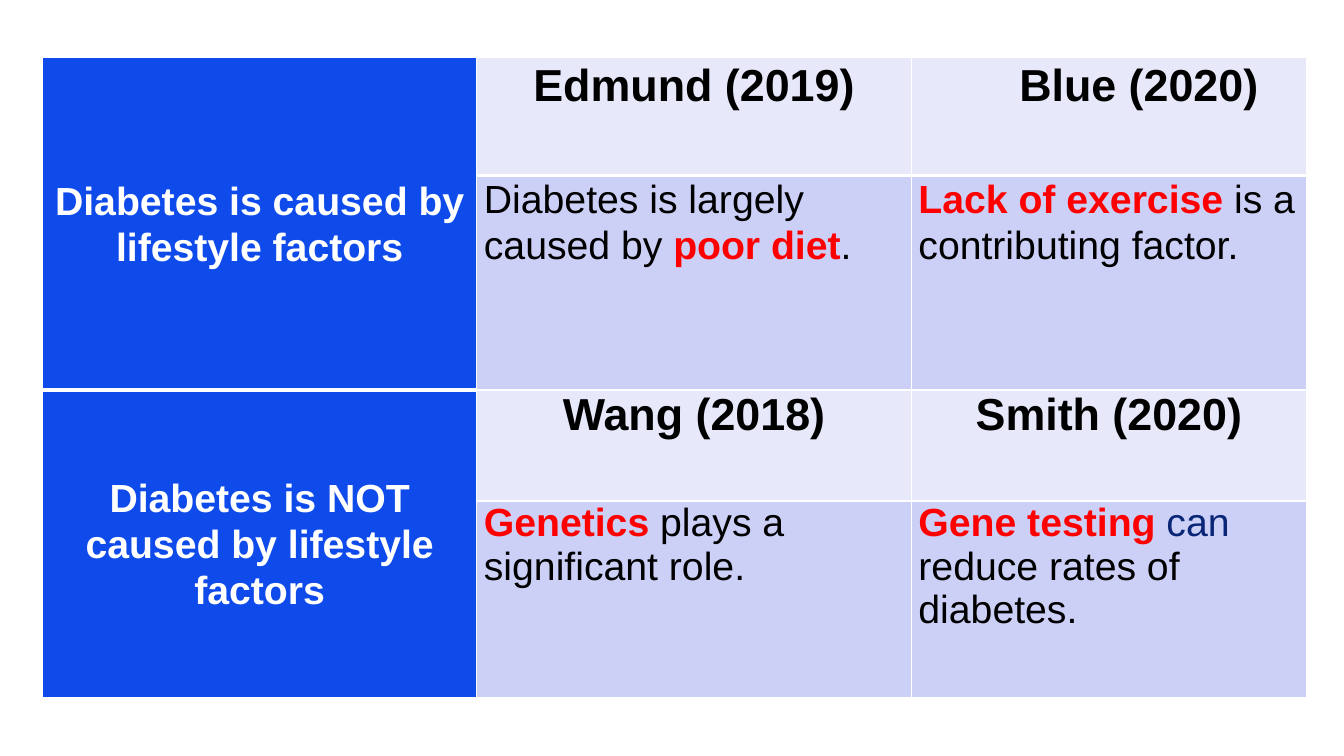
"""Build a slide with tables of sources for and against lifestyle causes of diabetes."""
import lxml.etree
import pptx
import pptx.dml.color
import pptx.enum.text
import pptx.oxml.ns
import pptx.util

Inches = pptx.util.Inches
Pt = pptx.util.Pt
PP_ALIGN = pptx.enum.text.PP_ALIGN
MSO_ANCHOR = pptx.enum.text.MSO_ANCHOR
qn = pptx.oxml.ns.qn

WHITE, BLACK, RED, NAVY = "FFFFFF", "000000", "FF0000", "082576"
CLAIM_FILL, SOURCE_FILL, FINDING_FILL = "0F4BEB", "E7E9FB", "CCD0F7"


def rgb(value):
    return pptx.dml.color.RGBColor.from_string(value)


def add_border(cell, side, width):
    ln = lxml.etree.SubElement(cell._tc.get_or_add_tcPr(), qn("a:ln" + side), w=str(Pt(width)))
    fill = lxml.etree.SubElement(ln, qn("a:solidFill"))
    lxml.etree.SubElement(fill, qn("a:srgbClr"), val=WHITE)


prs = pptx.Presentation()
prs.slide_width, prs.slide_height = Inches(13.33), Inches(7.5)
s = prs.slides.add_slide(prs.slide_layouts[6])

column_widths = [4.31, 4.31, 3.92]
row_heights = [1.17, 2.13, 1.1, 1.95]
rows = [
    [[("Diabetes is caused by lifestyle factors", WHITE)],
     [("Edmund (2019)", BLACK)],
     [("\tBlue (2020)", BLACK)]],
    [None,
     [("Diabetes is largely caused by ", BLACK), ("poor diet", RED), (".", BLACK)],
     [("Lack of exercise ", RED), ("is a contributing factor.", BLACK)]],
    [[("Diabetes is NOT caused by lifestyle factors", WHITE)],
     [("Wang (2018)", BLACK)],
     [("Smith (2020)", BLACK)]],
    [None,
     [("Genetics", RED), (" plays a significant role.", BLACK)],
     [("Gene testing ", RED), ("can ", NAVY), ("reduce rates of diabetes.", BLACK)]],
]

for top, row_count in ((0.59, 2), (0.57, 4)):
    heights = row_heights[:row_count]
    table = s.shapes.add_table(row_count, 3, Inches(0.42), Inches(top),
                               Inches(sum(column_widths)), Inches(sum(heights))).table
    for column, width in zip(table.columns, column_widths):
        column.width = Inches(width)
    for row, height in zip(table.rows, heights):
        row.height = Inches(height)

    for i, row in enumerate(rows[:row_count]):
        for j, runs in enumerate(row):
            cell = table.cell(i, j)
            is_claim = j == 0
            is_source = not is_claim and i % 2 == 0
            for side in "LRTB":
                add_border(cell, side, 3 if i == 0 and side == "B" else 1)
            cell.fill.solid()
            cell.fill.fore_color.rgb = rgb(
                CLAIM_FILL if is_claim else SOURCE_FILL if is_source else FINDING_FILL)
            cell.margin_left = cell.margin_right = Inches(0.07)
            cell.margin_top = cell.margin_bottom = 0
            if runs is None:
                continue
            cell.vertical_anchor = MSO_ANCHOR.MIDDLE if is_claim else MSO_ANCHOR.TOP
            p = cell.text_frame.paragraphs[0]
            starts_with_tab = runs[0][0].startswith("\t")
            centred = (is_claim or is_source) and not starts_with_tab
            p.alignment = PP_ALIGN.CENTER if centred else PP_ALIGN.LEFT
            p.line_spacing = 1.06 if i < 2 or is_claim else 1.0
            if starts_with_tab:
                tabs = lxml.etree.SubElement(p._p.get_or_add_pPr(), qn("a:tabLst"))
                lxml.etree.SubElement(tabs, qn("a:tab"), pos=str(Inches(1)), algn="l")
            p.font.name = "Arial"
            p.font.size = Pt(32 if is_source else 28)
            for text, color in runs:
                r = p.add_run()
                r.text = text
                r.font.bold = is_claim or is_source or color == RED
                r.font.color.rgb = rgb(color)

    for i in range(0, row_count, 2):
        table.cell(i, 0).merge(table.cell(i + 1, 0))

prs.save("out.pptx")
